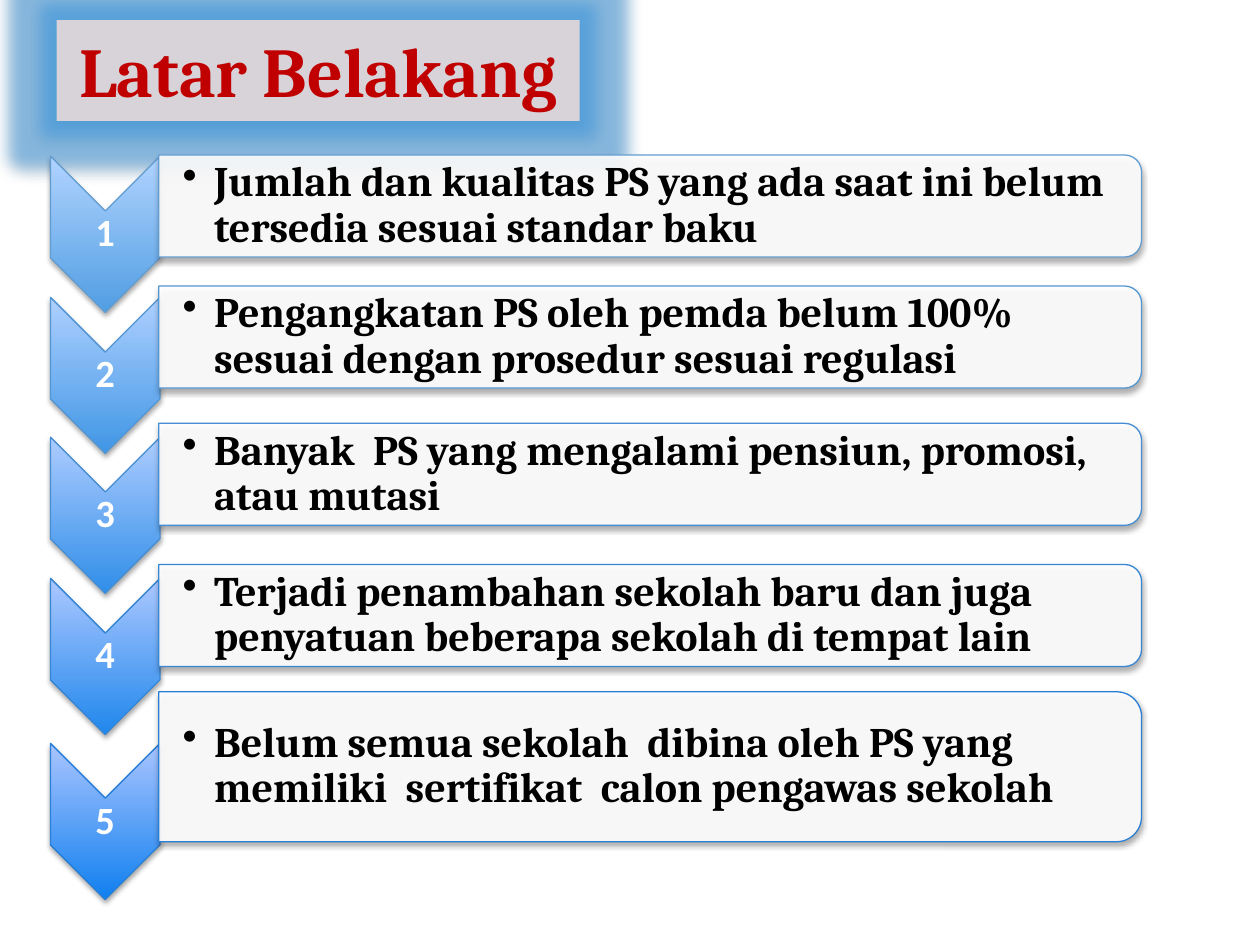
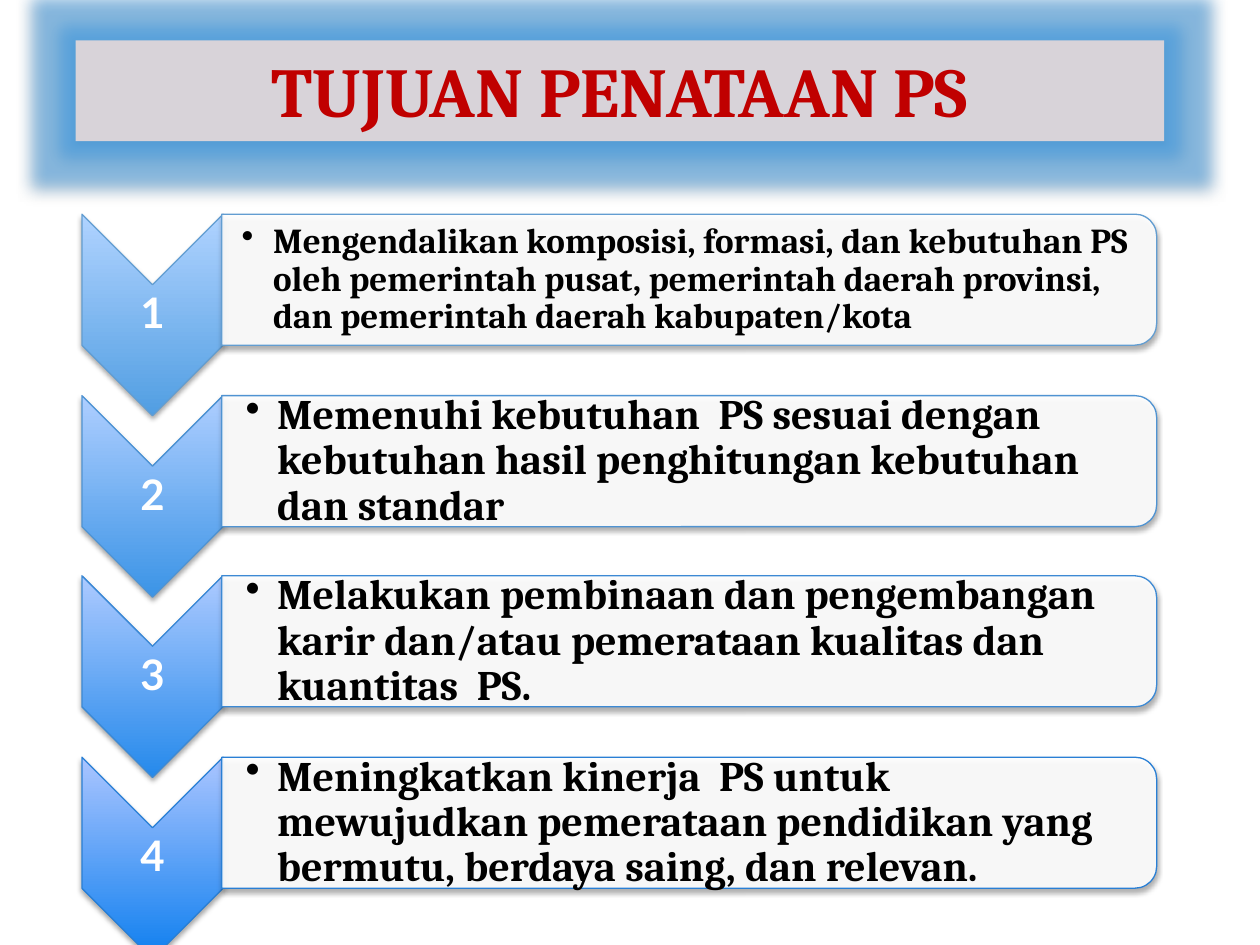
"""Build two slides of numbered chevron lists about school supervisors (PS)."""
from dataclasses import dataclass

from lxml.etree import SubElement
from pptx import Presentation
from pptx.dml.color import RGBColor
from pptx.enum.shapes import MSO_SHAPE
from pptx.enum.text import MSO_ANCHOR, MSO_AUTO_SIZE, PP_ALIGN
from pptx.oxml.ns import qn
from pptx.shapes.autoshape import Shape
from pptx.slide import Slide
from pptx.util import Inches, Pt

COLORS = {
    "title_fill": "D8D3D9",
    "title_text": "C00000",
    "glow": "3898E4",
    "shadow": "000000",
    "body": "000000",
    "white": "FFFFFF",
    "dark_first": "519EE2",
    "dark_last": "0F7FEF",
    "light_first": "B0D3FF",
    "light_last": "AAC5FF",
    "line_first": "629DD1",
    "line_last": "297FD5",
}
BODY_FONT = "Cambria"
CORNER_INSET = 0.05


@dataclass(frozen=True)
class Box:
    left: float
    top: float
    width: float
    height: float


@dataclass(frozen=True)
class Item:
    text: str
    chevron_top: float
    bar_top: float
    bar_height: float
    size: int = 24


@dataclass(frozen=True)
class ListSlide:
    title: str
    title_box: Box
    title_wraps: bool
    chevron_left: float
    chevron_width: float
    chevron_height: float
    bar_left: float
    bar_width: float
    number_font: str
    number_size: int
    items: tuple[Item, ...]


SLIDES = (
    ListSlide(
        "Latar Belakang", Box(0.45, 0.16, 4.15, 0.8), False,
        0.4, 0.87, 1.24, 1.26, 7.8, "Calibri", 22,
        (
            Item("Jumlah dan kualitas PS yang ada saat ini belum tersedia "
                 "sesuai standar baku", 1.24, 1.23, 0.81),
            Item("Pengangkatan PS oleh pemda belum 100% sesuai dengan "
                 "prosedur sesuai regulasi", 2.36, 2.27, 0.81),
            Item("Banyak  PS yang mengalami pensiun, promosi, atau mutasi",
                 3.47, 3.36, 0.81),
            Item("Terjadi penambahan sekolah baru dan juga penyatuan "
                 "beberapa sekolah di tempat lain", 4.59, 4.48, 0.81),
            Item("Belum semua sekolah  dibina oleh PS yang memiliki  "
                 "sertifikat  calon pengawas sekolah", 5.9, 5.49, 1.19),
        ),
    ),
    ListSlide(
        "TUJUAN PENATAAN PS", Box(0.6, 0.32, 8.64, 0.8), True,
        0.65, 1.12, 1.6, 1.76, 7.42, "Lato", 24,
        (
            Item("Mengendalikan komposisi, formasi, dan kebutuhan PS oleh "
                 "pemerintah pusat, pemerintah daerah provinsi, dan "
                 "pemerintah daerah kabupaten/kota", 1.7, 1.7, 1.04, 20),
            Item("Memenuhi kebutuhan  PS sesuai dengan kebutuhan hasil "
                 "penghitungan kebutuhan dan standar", 3.14, 3.14, 1.04),
            Item("Melakukan pembinaan dan pengembangan karir dan/atau "
                 "pemerataan kualitas dan kuantitas  PS.", 4.57, 4.57, 1.04),
            Item("Meningkatkan kinerja  PS untuk mewujudkan pemerataan "
                 "pendidikan yang  bermutu, berdaya saing, dan relevan.",
                 6.01, 6.01, 1.04),
        ),
    ),
)


def color(name: str) -> RGBColor:
    return RGBColor.from_string(COLORS[name])


def blend(name: str, share: float) -> RGBColor:
    pairs = zip(color(f"{name}_first"), color(f"{name}_last"))
    return RGBColor(*(round(first + (last - first) * share) for first, last in pairs))


def add_effect(shape: Shape, kind: str, color_name: str, alpha: int, **settings: int) -> None:
    effects = shape._element.spPr.find(qn("a:effectLst"))
    attributes = {key: str(value) for key, value in settings.items()}
    effect = SubElement(effects, qn(f"a:{kind}"), attributes)
    effect_color = SubElement(effect, qn("a:srgbClr"), val=COLORS[color_name])
    SubElement(effect_color, qn("a:alpha"), val=str(alpha * 1000))


def add_shadow(shape: Shape, alpha: int, blur: float, distance: float) -> None:
    add_effect(shape, "outerShdw", "shadow", alpha, blurRad=Pt(blur),
               dist=Pt(distance), dir=5400000, rotWithShape=0)


def add_box(slide: Slide, kind: MSO_SHAPE, box: Box) -> Shape:
    shape = slide.shapes.add_shape(
        kind, Inches(box.left), Inches(box.top), Inches(box.width), Inches(box.height))
    shape.shadow.inherit = False
    return shape


def add_turned(slide: Slide, kind: MSO_SHAPE, box: Box, line: RGBColor) -> Shape:
    shift = (box.width - box.height) / 2
    turned = Box(box.left + shift, box.top - shift, box.height, box.width)
    shape = add_box(slide, kind, turned)
    shape.rotation = 90
    shape.line.color.rgb = line
    shape.line.width = Pt(0.75)
    add_shadow(shape, 35, 3.1, 1.8)
    return shape


def write(shape: Shape, text: str, font: str, size: int, color_name: str,
          align: PP_ALIGN, insets: tuple[float, float, float, float]) -> None:
    frame = shape.text_frame
    frame.margin_left, frame.margin_top, frame.margin_right, frame.margin_bottom = (
        Inches(inset) for inset in insets)
    frame.text = text
    paragraph = frame.paragraphs[0]
    paragraph.alignment = align
    run_font = paragraph.runs[0].font
    run_font.name = font
    run_font.size = Pt(size)
    run_font.bold = True
    run_font.color.rgb = color(color_name)


def add_label(slide: Slide, box: Box, text: str, font: str, size: int, color_name: str,
              align: PP_ALIGN, left_inset: float) -> Shape:
    label = slide.shapes.add_textbox(
        Inches(box.left), Inches(box.top), Inches(box.width), Inches(box.height))
    write(label, text, font, size, color_name, align, (left_inset, 0.02, 0.02, 0.02))
    label.text_frame.word_wrap = True
    label.text_frame.vertical_anchor = MSO_ANCHOR.MIDDLE
    label.text_frame.paragraphs[0].line_spacing = 0.9
    return label


def add_bullet(label: Shape) -> None:
    paragraph = label.text_frame.paragraphs[0]
    paragraph.level = 1
    properties = paragraph._p.get_or_add_pPr()
    properties.set("marL", str(Inches(0.25)))
    properties.set("indent", str(-Inches(0.25)))
    SubElement(properties, qn("a:buChar"), char="•")


def add_title(slide: Slide, layout: ListSlide) -> None:
    title = add_box(slide, MSO_SHAPE.RECTANGLE, layout.title_box)
    title.fill.solid()
    title.fill.fore_color.rgb = color("title_fill")
    title.line.fill.background()
    add_effect(title, "glow", "glow", 50, rad=Pt(18))
    add_shadow(title, 32, 3.5, 2.2)
    write(title, layout.title, BODY_FONT, 40, "title_text", PP_ALIGN.CENTER,
          (0.13, 0.06, 0.13, 0.06))
    title.text_frame.vertical_anchor = MSO_ANCHOR.TOP
    title.text_frame.word_wrap = layout.title_wraps
    title.text_frame.auto_size = MSO_AUTO_SIZE.SHAPE_TO_FIT_TEXT


def add_chevron(slide: Slide, layout: ListSlide, item: Item, number: int, share: float) -> None:
    width, height = layout.chevron_width, layout.chevron_height
    box = Box(layout.chevron_left, item.chevron_top, width, height)
    chevron = add_turned(slide, MSO_SHAPE.CHEVRON, box, blend("line", share))
    chevron.fill.gradient()
    chevron.fill.gradient_angle = 90
    for stop, name in zip(chevron.fill.gradient_stops, ("dark", "light")):
        stop.color.rgb = blend(name, share)
    chevron._element.spPr.find(qn("a:gradFill")).set("rotWithShape", "0")
    number_box = Box(box.left, box.top + width / 2, width, height - width)
    add_label(slide, number_box, str(number), layout.number_font, layout.number_size,
              "white", PP_ALIGN.CENTER, 0.02)


def add_bar(slide: Slide, layout: ListSlide, item: Item, share: float) -> None:
    box = Box(layout.bar_left, item.bar_top, layout.bar_width, item.bar_height)
    bar = add_turned(slide, MSO_SHAPE.ROUND_2_SAME_RECTANGLE, box, blend("line", share))
    bar.fill.solid()
    bar.fill.fore_color.rgb = color("white")
    fill_color = bar._element.spPr.find(qn("a:solidFill")).find(qn("a:srgbClr"))
    SubElement(fill_color, qn("a:alpha"), val="90000")
    inset = box.height * CORNER_INSET
    text_box = Box(box.left, box.top + inset, box.width - inset, box.height - 2 * inset)
    label = add_label(slide, text_box, item.text, BODY_FONT, item.size, "body",
                      PP_ALIGN.LEFT, 0.19 * item.size / 24)
    add_bullet(label)


def main() -> None:
    presentation = Presentation()
    presentation.slide_width = Inches(10)
    presentation.slide_height = Inches(7.5)
    for layout in SLIDES:
        slide = presentation.slides.add_slide(presentation.slide_layouts[6])
        add_title(slide, layout)
        for index, item in enumerate(layout.items):
            share = index / (len(layout.items) - 1)
            add_chevron(slide, layout, item, index + 1, share)
            add_bar(slide, layout, item, share)
    presentation.save("out.pptx")


if __name__ == "__main__":
    main()
